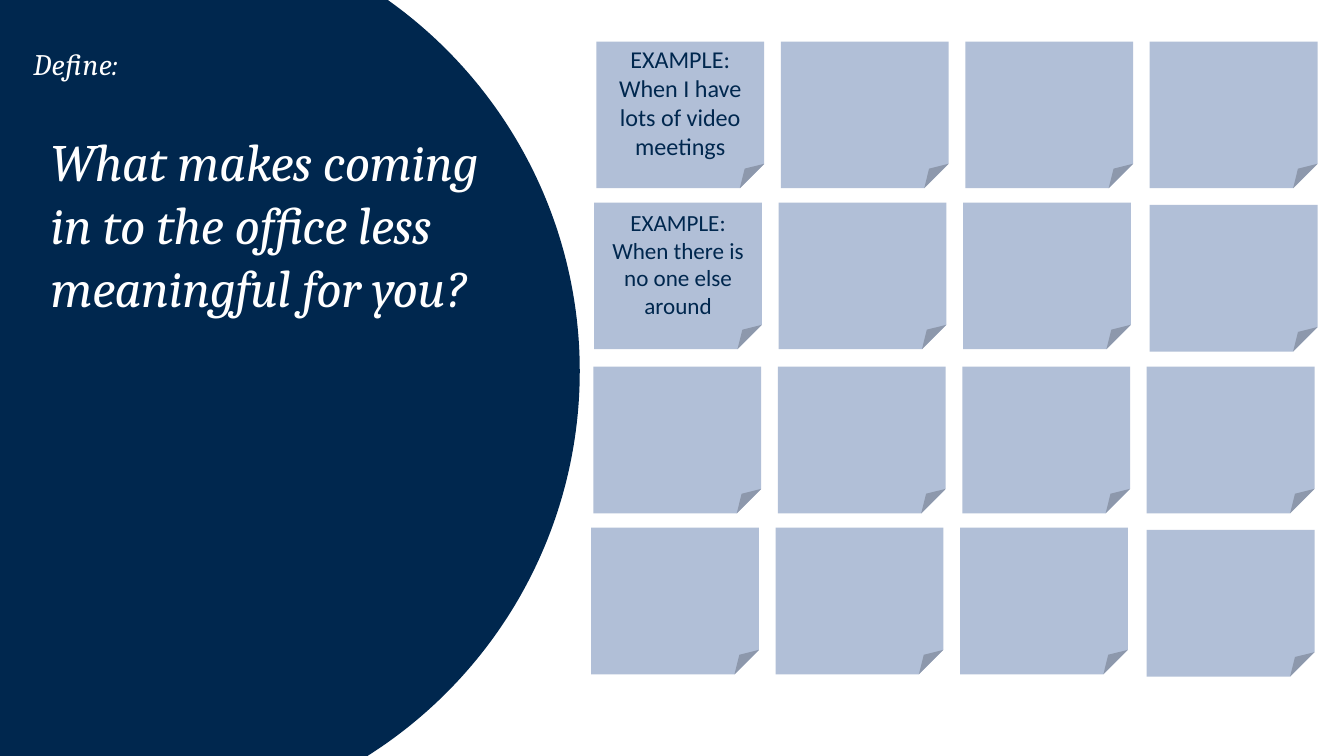
from dataclasses import dataclass
from itertools import product

from pptx import Presentation, util as u
from pptx.dml.color import RGBColor
from pptx.enum import shapes, text


@dataclass(frozen=True)
class Theme:
    navy: str = "00274E"
    note: str = "B1BFD7"
    white: str = "FFFFFF"
    serif: str = "Cambria"
    sans: str = "Calibri"
    label_size: float = 28.4
    question_size: float = 50
    note_sizes: tuple = (23, 22)


COLUMNS, ROWS = 17.78, 10  # grid of one-inch units
NOTE_WIDTH, NOTE_HEIGHT = 2.22, 1.94
NOTE_STEP = 2.44
BLOCK_LEFTS, BLOCK_TOPS = (7.89, 7.85), (0.55, 4.85)
ROW_STEP, NUDGE = 2.13, 0.03

EXAMPLES = {
    (0, 0): ("EXAMPLE:", "When I have lots of video meetings"),
    (0, 1): ("EXAMPLE:", "When there is no one else around"),
}


class Board:
    def __init__(self, slide, theme):
        self.slide, self.theme = slide, theme

    def box(self, *grid):
        return [u.Inches(length) for length in grid]

    def panel(self, preset, color, *grid):
        panel = self.slide.shapes.add_shape(preset, *self.box(*grid))
        panel.shadow.inherit = False
        panel.fill.solid()
        panel.fill.fore_color.rgb = RGBColor.from_string(color)
        panel.line.fill.background()
        return panel

    def add_words(self, paragraph, words, size, font, color, italic=False, tracking=0):
        """Add one run; tracking is in hundredths of a point."""
        run = paragraph.add_run()
        run.text = words
        run.font.size = u.Pt(size)
        run.font.name = font
        run.font.italic = italic
        run.font.color.rgb = RGBColor.from_string(color)
        if tracking:
            run._r.get_or_add_rPr().set("spc", str(tracking))

    def sticky_note(self, left, top, lines=(), size=0):
        note = self.panel(shapes.MSO_SHAPE.FOLDED_CORNER, self.theme.note,
                          left, top, NOTE_WIDTH, NOTE_HEIGHT)
        frame = note.text_frame
        frame.word_wrap = True
        frame.vertical_anchor = text.MSO_ANCHOR.MIDDLE
        for index, line in enumerate(lines):
            paragraph = frame.add_paragraph() if index else frame.paragraphs[0]
            paragraph.alignment = text.PP_ALIGN.CENTER
            self.add_words(paragraph, line, size, self.theme.sans, self.theme.navy)

    def heading(self, words, size, tracking, inset, before, *grid):
        """Add white italic serif text and return its paragraph."""
        frame = self.slide.shapes.add_textbox(*self.box(*grid)).text_frame
        frame.word_wrap = True
        frame.auto_size = text.MSO_AUTO_SIZE.SHAPE_TO_FIT_TEXT
        frame.margin_left = frame.margin_right = frame.margin_bottom = 0
        frame.margin_top = u.Inches(inset)
        paragraph = frame.paragraphs[0]
        paragraph.space_before = u.Pt(before)
        self.add_words(paragraph, words, size, self.theme.serif, self.theme.white,
                       italic=True, tracking=tracking)
        return paragraph

    def note_wall(self):
        """Two blocks of two rows; each lower row steps left, its last note down."""
        for block, lower in product(range(2), range(2)):
            for column in range(4):
                last = column == 3
                left = BLOCK_LEFTS[block] + column * NOTE_STEP
                top = BLOCK_TOPS[block] + lower * ROW_STEP
                if lower and last:
                    top += NUDGE
                elif lower:
                    left -= NUDGE
                lines = EXAMPLES.get((column, 2 * block + lower), ())
                self.sticky_note(left, top, lines, self.theme.note_sizes[lower])


def main():
    deck = Presentation()
    deck.slide_width, deck.slide_height = u.Inches(COLUMNS), u.Inches(ROWS)
    theme = Theme()
    board = Board(deck.slides.add_slide(deck.slide_layouts[6]), theme)

    board.panel(shapes.MSO_SHAPE.FLOWCHART_CONNECTOR, theme.navy,
                -4.44, -1.12, 12.11, 12.06)
    board.note_wall()
    label = board.heading("Define:", theme.label_size, 50, 0.09, 6.8,
                          0.44, 0.34, 1.68, 0.7)
    label.line_spacing = u.Pt(46.6)
    question = board.heading(
        "What makes coming in to the office less meaningful for you?",
        theme.question_size, -30, 0.02, 1.1, 0.67, 1.69, 6.13, 2.54)
    question.space_after = u.Pt(13.3)
    deck.save("out.pptx")


if __name__ == "__main__":
    main()
